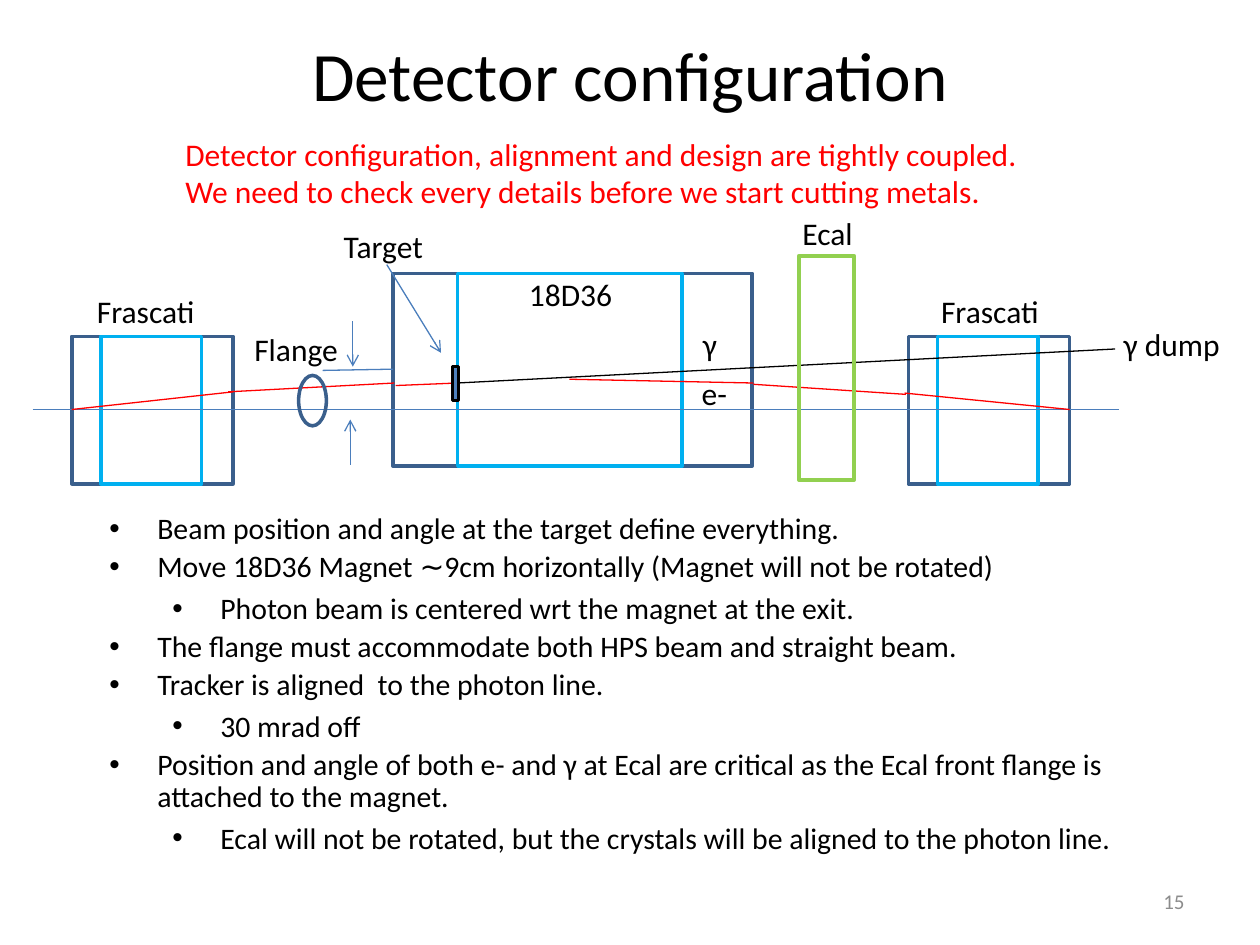
from dataclasses import dataclass

from lxml import etree
from pptx import Presentation
from pptx.dml.color import RGBColor
from pptx.enum.shapes import MSO_CONNECTOR, MSO_SHAPE
from pptx.enum.text import MSO_ANCHOR, PP_ALIGN
from pptx.oxml.ns import qn
from pptx.util import Inches, Pt

RECTANGLE, OVAL = MSO_SHAPE.RECTANGLE, MSO_SHAPE.OVAL
STRAIGHT = MSO_CONNECTOR.STRAIGHT
LEFT, CENTER, RIGHT = PP_ALIGN.LEFT, PP_ALIGN.CENTER, PP_ALIGN.RIGHT
TOP, MIDDLE = MSO_ANCHOR.TOP, MSO_ANCHOR.MIDDLE


@dataclass(frozen=True)
class Theme:
    font: str = "Calibri"
    title: float = 39.6
    label: float = 18
    body: float = 17
    small: float = 12
    ink: str = "000000"
    alert: str = "FF0000"
    muted: str = "8C8C8C"
    yoke: str = "3A5F8C"
    coil: str = "00B0F0"
    guide: str = "4B7EBC"
    ecal: str = "92D050"
    target: str = "4F81BD"
    outline: float = 2
    thin: float = 0.75


THEME = Theme()


@dataclass(frozen=True)
class Box:
    left: float
    top: float
    width: float
    height: float

    def share(self, x, y, width, height):
        """Return the inner box whose place and size are shares of this one."""
        return Box(self.left + x * self.width, self.top + y * self.height,
                   width * self.width, height * self.height)

    def cells(self, columns, rows, x, y, width=0, height=0):
        """Return the inner box given in cells of a columns by rows grid."""
        return self.share(x / columns, y / rows, width / columns, height / rows)

    def lengths(self):
        return [Inches(n) for n in (self.left, self.top, self.width, self.height)]


PAGE = Box(0, 0, 10, 7.5)

BULLETS = [
    (0, "Beam position and angle at the target define everything."),
    (0, "Move 18D36 Magnet ∼9cm horizontally (Magnet will not be rotated)"),
    (1, "Photon beam is centered wrt the magnet at the exit."),
    (0, "The flange must accommodate both HPS beam and straight beam."),
    (0, "Tracker is aligned  to the photon line."),
    (1, "30 mrad off"),
    (0, "Position and angle of both e- and γ at Ecal are critical as the Ecal "
        "front flange is attached to the magnet."),
    (1, "Ecal will not be rotated, but the crystals will be aligned to the "
        "photon line."),
]


def color(code):
    return RGBColor.from_string(code)


def add_text(page, box, lines, size=THEME.label, ink=THEME.ink, align=LEFT,
             anchor=TOP, wrap=True):
    frame = page.shapes.add_textbox(*box.lengths()).text_frame
    frame.word_wrap = wrap
    frame.vertical_anchor = anchor
    for index, line in enumerate(lines):
        para = frame.paragraphs[0] if index == 0 else frame.add_paragraph()
        para.alignment = align
        span = para.add_run()
        span.text = line
        span.font.name = THEME.font
        span.font.size = Pt(size)
        span.font.color.rgb = color(ink)
    return frame


def add_outline(page, box, line, kind=RECTANGLE, fill=None):
    shape = page.shapes.add_shape(kind, *box.lengths())
    shape.shadow.inherit = False
    if fill:
        shape.fill.solid()
        shape.fill.fore_color.rgb = color(fill)
    else:
        shape.fill.background()
    shape.line.color.rgb = color(line)
    shape.line.width = Pt(THEME.outline)


def add_line(page, start, end, ink, arrow=False):
    """Join the top left corners of two boxes."""
    line = page.shapes.add_connector(STRAIGHT, *start.lengths()[:2],
                                     *end.lengths()[:2])
    line.line.color.rgb = color(ink)
    line.line.width = Pt(THEME.thin)
    properties = line._element.spPr
    if arrow:
        etree.SubElement(properties.find(qn("a:ln")), qn("a:tailEnd"), type="arrow")
    etree.SubElement(properties, qn("a:effectLst"))


def draw_header(page, box):
    add_text(page, box.share(0, 0, 1, 0.45), ["Detector configuration"],
             size=THEME.title, align=CENTER, anchor=MIDDLE)
    add_text(page, box.share(0.097, 0.52, 0.766, 0.48),
             ["Detector configuration, alignment and design are tightly coupled.",
              "We need to check every details before we start cutting metals."],
             ink=THEME.alert, wrap=False)


def draw_magnet(page, box):
    add_outline(page, box, THEME.yoke)
    add_outline(page, box.share(0.18, 0, 0.625, 1), THEME.coil)


def draw_beamline(page, box):
    """Draw the magnets, beams and labels on a grid of 100 by 22 cells."""
    def place(*cells):
        return box.cells(100, 22, *cells)

    for magnet in ((5.7, 10.7, 12.8, 11.7), (31.2, 5.7, 28.5, 15.3),
                   (72.1, 10.7, 12.8, 11.7)):
        draw_magnet(page, place(*magnet))

    beams = [
        (THEME.guide, (2.6, 16.5), (88.8, 16.5)),
        (THEME.alert, (5.7, 16.5), (18.5, 15.1)),
        (THEME.alert, (18.1, 15.1), (31.3, 14.4)),
        (THEME.alert, (31.4, 14.6), (36.3, 14.4)),
        (THEME.ink, (36.3, 14.4), (88.5, 11.7)),
        (THEME.alert, (45.2, 14.1), (59.8, 14.4)),
        (THEME.alert, (59.8, 14.5), (71.9, 15.3)),
        (THEME.alert, (71.8, 15.2), (84.9, 16.5)),
        (THEME.guide, (31.2, 13.3), (25.6, 13.4)),
    ]
    for ink, start, end in beams:
        add_line(page, place(*start), place(*end), ink)

    add_outline(page, place(63.4, 4.3, 4.4, 17.8), THEME.ecal)
    add_outline(page, place(35.9, 13.1, 0.5, 2.7), THEME.ink, fill=THEME.target)
    add_outline(page, place(23.7, 13.8, 2.2, 4), THEME.yoke, kind=OVAL)

    pointers = [((28, 9.5), (28, 13.1)), ((27.8, 20.9), (27.8, 17.3)),
                ((30.7, 5), (35, 12))]
    for start, end in pointers:
        add_line(page, place(*start), place(*end), THEME.guide, arrow=True)

    labels = [
        ("γ", 54.8, 9.3, 3.1), ("e-", 54.7, 13.2, 4.1), ("Ecal", 62.7, 0.5, 6.5),
        ("Frascati", 6.7, 6.7, 9.8), ("18D36", 41, 5.3, 8.7),
        ("Frascati", 73.7, 6.7, 9.8), ("Target", 26.3, 1.5, 8.4),
        ("Flange", 19.2, 9.7, 8.7), ("γ dump", 88.2, 9.3, 9.6),
    ]
    for text, x, y, width in labels:
        add_text(page, place(x, y, width, 4), [text], wrap=False)


def draw_bullets(page, box):
    frame = add_text(page, box, [text for _, text in BULLETS], size=THEME.body)
    for para, (level, _) in zip(frame.paragraphs, BULLETS):
        para.level = level
        para.line_spacing = 1.0 if level else 0.9
        para.space_before = Pt(0.2 * THEME.body)
        layout = para._p.get_or_add_pPr()
        layout.set("marL", str(Inches(0.38 + 0.5 * level)))
        layout.set("indent", str(Inches(-0.38)))
        etree.SubElement(layout, qn("a:buFont"), typeface="Arial")
        etree.SubElement(layout, qn("a:buChar"), char="•")


def draw_page_number(page, box):
    add_text(page, box, ["15"], size=THEME.small, ink=THEME.muted, align=RIGHT,
             anchor=MIDDLE)


def main():
    deck = Presentation()
    deck.slide_width, deck.slide_height = Inches(PAGE.width), Inches(PAGE.height)
    page = deck.slides.add_slide(deck.slide_layouts[6])
    draw_header(page, PAGE.cells(20, 30, 1, 1, 18, 5.92))
    draw_beamline(page, PAGE.cells(20, 30, 0, 6.4, 20, 8.8))
    draw_bullets(page, PAGE.share(0.077, 0.537, 0.835, 0.396))
    draw_page_number(page, PAGE.share(0.717, 0.927, 0.233, 0.053))
    deck.save("out.pptx")


if __name__ == "__main__":
    main()
